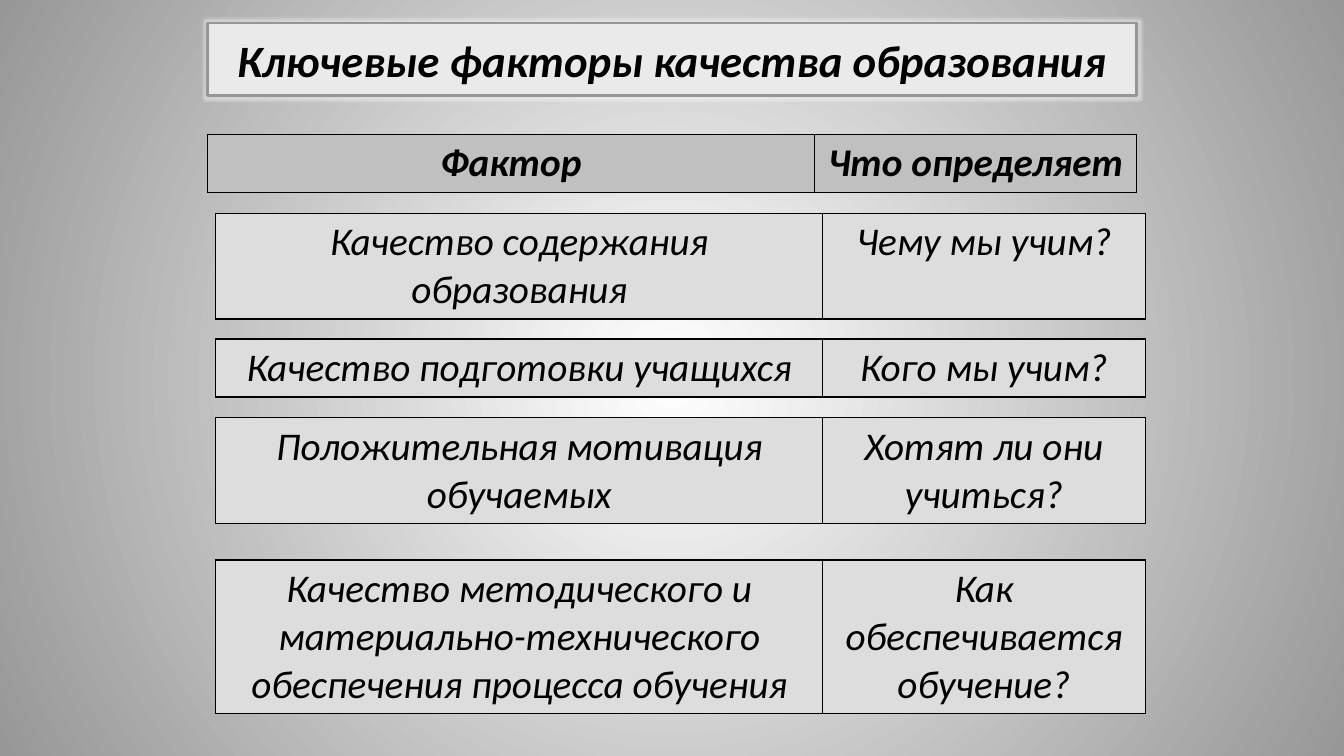
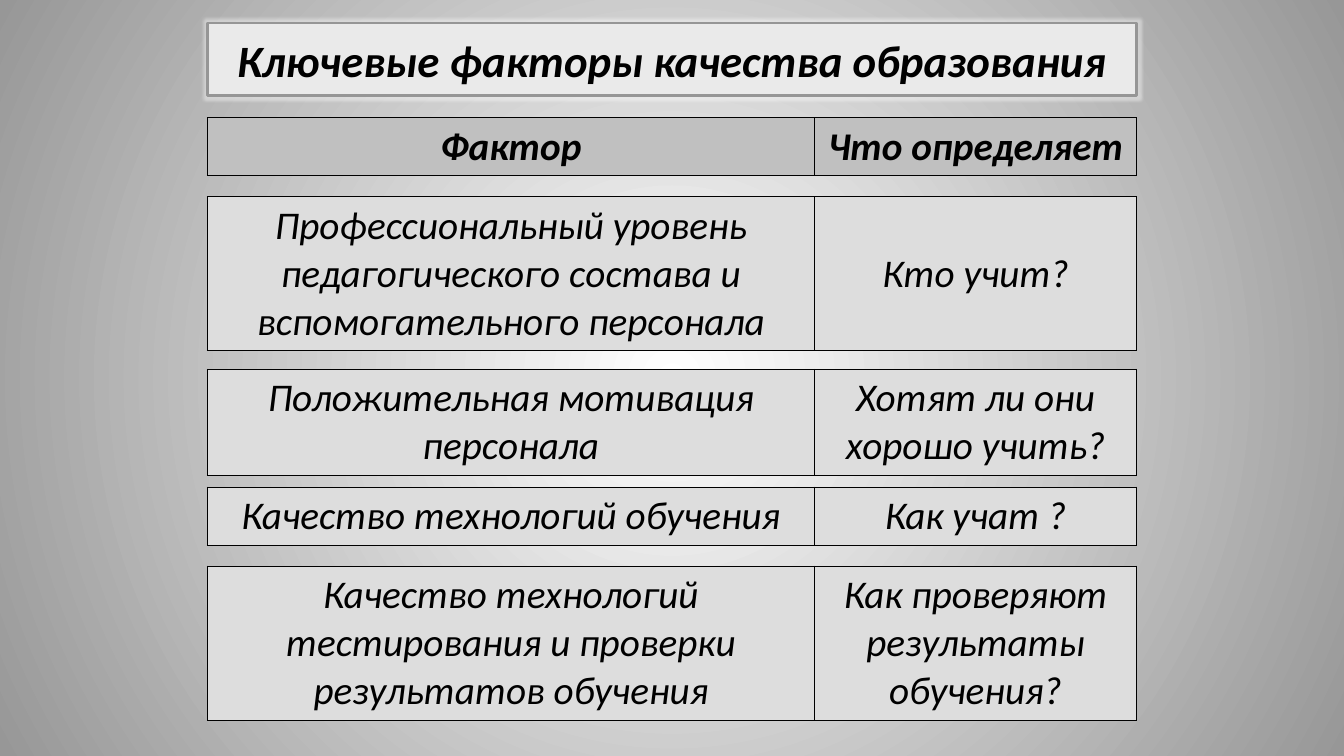
from lxml.etree import SubElement
from pptx import Presentation
from pptx.dml.color import RGBColor
from pptx.enum.shapes import MSO_SHAPE
from pptx.enum.text import MSO_ANCHOR, PP_ALIGN
from pptx.oxml.ns import qn
from pptx.util import Cm, Pt

HEADING = "Ключевые факторы качества образования"
HEAD = ("Фактор", "Что определяет")
LEFT, GAP = 5.23, 0.54
COLS = (15.29, 8.13)
LINE, PAD = 1.18, 0.27  # height of a text line, space around the text


def rgb(code):
    return RGBColor.from_string(code)


def sub(node, tag, **attrs):
    return SubElement(node, qn(tag), attrs)


class Deck:
    font = {"name": "Calibri", "italic": True}
    title_font = {**font, "size": Pt(32), "bold": True}
    head_font = {**font, "size": Pt(28), "bold": True}
    row_font = {**font, "size": Pt(28), "bold": False}
    glow, edge = "FFFFFF", "979797"
    panel, frame = "EAEAEA", "969696"
    head_fill, row_fill, ink = "C0C0C0", "DDDDDD", "000000"

    def __init__(self):
        self.prs = Presentation()
        self.prs.slide_width, self.prs.slide_height = Cm(33.87), Cm(19.05)
        self.slide = None

    def add(self):
        """Start a slide with a round gradient behind it."""
        self.slide = self.prs.slides.add_slide(self.prs.slide_layouts[6])
        fill = self.slide.background.fill
        fill.gradient()
        for stop, place, code in zip(fill.gradient_stops, (0, 1), (self.glow, self.edge)):
            stop.position = place
            stop.color.rgb = rgb(code)
        grad = next(self.slide.element.iter(qn("a:gradFill")))
        grad.remove(grad.find(qn("a:lin")))
        circle = sub(grad, "a:path", path="circle")
        sub(circle, "a:fillToRect", **dict.fromkeys("ltrb", "50000"))

    def label(self, frame, text, style):
        """Put centred text into a shape or a cell."""
        frame.word_wrap = True
        para = frame.paragraphs[0]
        para.alignment = PP_ALIGN.CENTER
        run = para.add_run()
        run.text = text
        for key, value in style.items():
            setattr(run.font, key, value)
        run.font.color.rgb = rgb(self.ink)

    def title(self, text):
        box = self.slide.shapes.add_shape(
            MSO_SHAPE.ROUND_2_DIAG_RECTANGLE,
            Cm(LEFT), Cm(0.58), Cm(sum(COLS)), Cm(1.83))
        for i in range(2):
            box.adjustments[i] = 0
        box.fill.solid()
        box.fill.fore_color.rgb = rgb(self.panel)
        box.line.color.rgb = rgb(self.frame)
        box.line.width = Pt(2)
        # Soft light halo
        box.shadow.inherit = False
        halo = sub(box.element.spPr.find(qn("a:effectLst")), "a:glow", rad=str(Pt(4)))
        tint = sub(halo, "a:srgbClr", val=self.glow)
        sub(tint, "a:alpha", val="40000")
        box.text_frame.vertical_anchor = MSO_ANCHOR.MIDDLE
        self.label(box.text_frame, text, self.title_font)

    def border(self, cell):
        props = cell._tc.get_or_add_tcPr()
        for side in "LRTB":
            line = sub(props, f"a:ln{side}", w=str(Pt(1)))
            sub(sub(line, "a:solidFill"), "a:srgbClr", val=self.ink)

    def row(self, texts, left, top, lines, style, fill, anchor=MSO_ANCHOR.TOP):
        """Draw a table of one row and return its bottom edge."""
        high = PAD + LINE * lines
        table = self.slide.shapes.add_table(
            1, len(COLS), Cm(left), Cm(top), Cm(sum(COLS)), Cm(high)).table
        table.first_row = table.horz_banding = False
        for col, wide, cell, text in zip(table.columns, COLS, table.rows[0].cells, texts):
            col.width = Cm(wide)
            self.border(cell)
            cell.fill.solid()
            cell.fill.fore_color.rgb = rgb(fill)
            cell.vertical_anchor = anchor
            self.label(cell.text_frame, text, style)
        return top + high

    def page(self, top, left, rows):
        self.add()
        self.title(HEADING)
        end = self.row(HEAD, LEFT, top, 1, self.head_font, self.head_fill)
        for texts, lines, gap, anchor in rows:
            end = self.row(texts, left, end + gap, lines,
                           self.row_font, self.row_fill, anchor)


# Each row: texts, number of lines, gap above, anchor
TOP, MID = MSO_ANCHOR.TOP, MSO_ANCHOR.MIDDLE
LEARN = [
    (("Качество содержания образования", "Чему мы учим?"), 2, GAP, TOP),
    (("Качество подготовки учащихся", "Кого мы учим?"), 1, GAP, TOP),
    (("Положительная мотивация обучаемых", "Хотят ли они учиться?"), 2, GAP, TOP),
    (("Качество методического и материально-технического обеспечения процесса обучения",
      "Как обеспечивается обучение?"), 3, 0.95, TOP),
]
TEACH = [
    (("Профессиональный уровень педагогического состава и вспомогательного персонала",
      "Кто учит?"), 3, GAP, MID),
    (("Положительная мотивация персонала", "Хотят ли они хорошо учить?"), 2, GAP, TOP),
    (("Качество технологий обучения", "Как учат ?"), 1, 0.34, TOP),
    (("Качество технологий тестирования и проверки результатов обучения",
      "Как проверяют результаты обучения?"), 3, GAP, TOP),
]


def main():
    deck = Deck()
    deck.page(3.38, 5.44, LEARN)
    deck.page(2.97, LEFT, TEACH)
    deck.prs.save("out.pptx")


if __name__ == "__main__":
    main()
